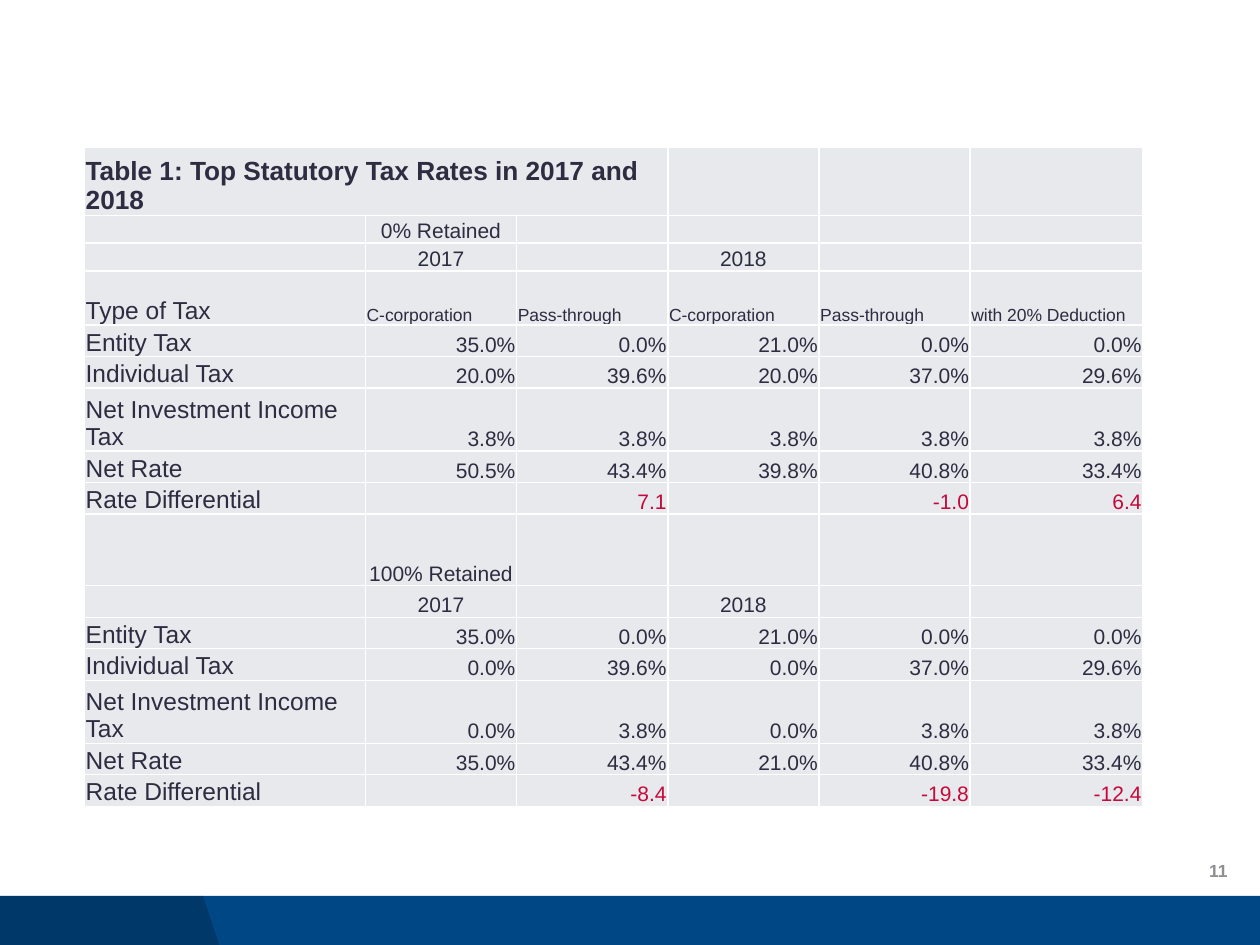
from lxml import etree
from pptx import Presentation
from pptx import util as u
from pptx.dml.color import RGBColor
from pptx.enum import shapes, text
from pptx.oxml import ns

INK, RED, PALE, WHITE = "2D2C41", "C5093B", "E7E9ED", "FFFFFF"
LEFT, CENTER, RIGHT = text.PP_ALIGN.LEFT, text.PP_ALIGN.CENTER, text.PP_ALIGN.RIGHT
COLUMNS = [2.23, 1.2, 1.2, 1.2, 1.2, 1.37]
YEARS = ["", "2017", "", "2018", "", ""]
TAXES = ["Entity Tax", "Individual Tax", "Net Investment Income Tax", "Net Rate"]
TAX_HEIGHTS = [0.25, 0.25, 0.5, 0.25]
DISTRIBUTED = [
    ["35.0%", "0.0%", "21.0%", "0.0%", "0.0%"],
    ["20.0%", "39.6%", "20.0%", "37.0%", "29.6%"],
    ["3.8%", "3.8%", "3.8%", "3.8%", "3.8%"],
    ["50.5%", "43.4%", "39.8%", "40.8%", "33.4%"],
]
RETAINED = [
    ["35.0%", "0.0%", "21.0%", "0.0%", "0.0%"],
    ["0.0%", "39.6%", "0.0%", "37.0%", "29.6%"],
    ["0.0%", "3.8%", "0.0%", "3.8%", "3.8%"],
    ["35.0%", "43.4%", "21.0%", "40.8%", "33.4%"],
]


def rgb(value):
    """Turn a hex string into a colour."""
    return RGBColor.from_string(value)


def style(p, size, color, bold=False, align=LEFT):
    """Set the font and alignment of a paragraph."""
    p.alignment = align
    p.font.name, p.font.size, p.font.bold = "Arial", u.Pt(size), bold
    p.font.color.rgb = rgb(color)


def paint(sp, color, alpha=None):
    """Give a shape a flat fill, optionally see-through."""
    sp.shadow.inherit = False
    sp.line.fill.background()
    sp.fill.solid()
    sp.fill.fore_color.rgb = rgb(color)
    if alpha:
        clr = sp.fill._xPr.find(".//" + ns.qn("a:srgbClr"))
        etree.SubElement(clr, ns.qn("a:alpha"), val=str(alpha * 1000))


def add_borders(cell, color):
    """Draw one-point borders round a cell."""
    tcPr = cell._tc.get_or_add_tcPr()
    for i, side in enumerate("LRTB"):
        ln = etree.Element(ns.qn(f"a:ln{side}"), w=str(u.Pt(1)))
        fill = etree.SubElement(ln, ns.qn("a:solidFill"))
        etree.SubElement(fill, ns.qn("a:srgbClr"), val=color)
        tcPr.insert(i, ln)


def fill_cell(cell, words, size, color, bold, align):
    """Format one table cell and write its words."""
    cell.fill.solid()
    cell.fill.fore_color.rgb = rgb(PALE)
    add_borders(cell, WHITE)
    cell.margin_left = cell.margin_right = cell.margin_top = u.Inches(0.01)
    cell.margin_bottom = 0
    cell.vertical_anchor = text.MSO_ANCHOR.BOTTOM
    p = cell.text_frame.paragraphs[0]
    if words:
        p.text = words
    else:
        p._p.get_or_add_endParaRPr().set("sz", "1000")
    style(p, size, color, bold, align)


def section(heading, heights, captions, rates, differentials):
    """List the rows of one retention case as height, kind and words."""
    rows = [(heights[0], "heading", ["", heading, "", "", "", ""]),
            (heights[1], "heading", YEARS)]
    rows += captions
    rows += [(h, "rate", [tax, *values])
             for h, tax, values in zip(TAX_HEIGHTS, TAXES, rates)]
    return rows + [(0.25, "differential", ["Rate Differential", *differentials])]


def add_rate_table(s, left, top):
    """Place the tax rate table."""
    captions = [(0.43, "caption", ["Type of Tax", "C-corporation", "Pass-through",
                                   "C-corporation", "Pass-through", "with 20% Deduction"])]
    rows = [(0.54, "title", ["Table 1: Top Statutory Tax Rates in 2017 and 2018"] + [""] * 5)]
    rows += section("0% Retained", (0.22, 0.22), captions, DISTRIBUTED,
                    ["", "7.1", "", "-1.0", "6.4"])
    rows += section("100% Retained", (0.57, 0.25), [], RETAINED,
                    ["", "-8.4", "", "-19.8", "-12.4"])
    looks = {
        "title": (15, INK, True, LEFT),
        "heading": (12, INK, False, CENTER),
        "caption": (10, INK, False, LEFT),
        "rate": (12, INK, False, RIGHT),
        "differential": (12, RED, False, RIGHT),
    }
    height = sum(row[0] for row in rows)
    table = s.shapes.add_table(len(rows), len(COLUMNS), u.Inches(left), u.Inches(top),
                               u.Inches(sum(COLUMNS)), u.Inches(height)).table
    table.first_row = table.horz_banding = False
    for column, width in zip(table.columns, COLUMNS):
        column.width = u.Inches(width)
    for r, (row_height, kind, cells) in enumerate(rows):
        table.rows[r].height = u.Inches(row_height)
        for c, words in enumerate(cells):
            is_label = c == 0 and kind != "title"
            look = (14, INK, False, LEFT) if is_label else looks[kind]
            fill_cell(table.cell(r, c), words, *look)
    table.cell(0, 0).merge(table.cell(0, 2))


def add_footer(s, left, top, width, height):
    """Place the blue band with its darker slanted end."""
    band = s.shapes.add_shape(shapes.MSO_SHAPE.RECTANGLE, u.Inches(left), u.Inches(top),
                              u.Inches(width), u.Inches(height))
    paint(band, "004785")
    corners = [(left + 1.61, top), (left + 1.75, top + height), (left, top + height)]
    builder = s.shapes.build_freeform(u.Inches(left), u.Inches(top))
    builder.add_line_segments([(u.Inches(x), u.Inches(y)) for x, y in corners], close=True)
    paint(builder.convert_to_shape(), "000000", alpha=20)


def add_page_number(s, left, top, width, height):
    """Place the page number."""
    tf = s.shapes.add_textbox(u.Inches(left), u.Inches(top),
                              u.Inches(width), u.Inches(height)).text_frame
    tf.word_wrap = True
    tf.vertical_anchor = text.MSO_ANCHOR.MIDDLE
    p = tf.paragraphs[0]
    p.text = "11"
    style(p, 10, "8F8F93", True, RIGHT)


def main():
    """Build the slide and save it."""
    prs = Presentation()
    prs.slide_width, prs.slide_height = u.Inches(10), u.Inches(7.5)
    s = prs.slides.add_slide(prs.slide_layouts[6])
    add_footer(s, 0, 7.11, 10, 0.42)
    add_page_number(s, 7.59, 6.71, 2.25, 0.4)
    add_rate_table(s, 0.67, 1.17)
    prs.save("out.pptx")


if __name__ == "__main__":
    main()
